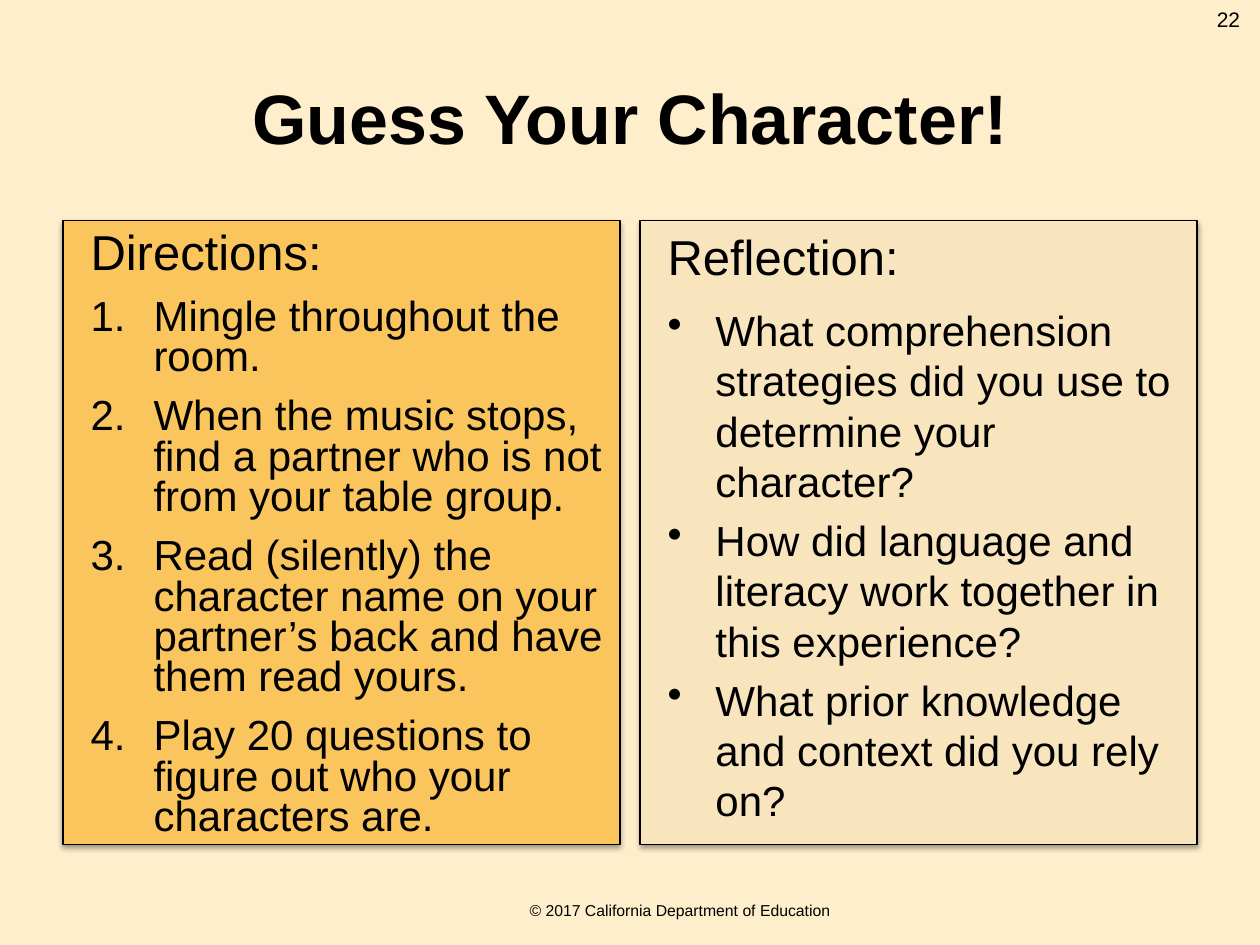
from dataclasses import dataclass

import pptx
import pptx.dml.color
import pptx.enum.shapes
import pptx.enum.text
import pptx.oxml
import pptx.oxml.ns
import pptx.util

Inches = pptx.util.Inches
Pt = pptx.util.Pt
ALIGN = pptx.enum.text.PP_ALIGN
ANCHOR = pptx.enum.text.MSO_ANCHOR
NS = pptx.oxml.ns.nsdecls("a")
INK = "000000"
HEADING_INDENT = 0.12


@dataclass(frozen=True)
class Panel:
    left: float
    fill: str
    heading: str
    items: tuple[str, ...]
    marker: str
    indent: float
    hanging: float
    line_spacing: float
    space_after: float
    top_inset: float


PANELS = (
    Panel(0.5, "FAC55C", "Directions:", (
        "Mingle throughout the room.",
        "When the music stops, find a partner who is not from your table group.",
        "Read (silently) the character name on your partner’s back and have them read yours.",
        "Play 20 questions to figure out who your characters are.",
    ), '<a:buAutoNum %s type="arabicPeriod"/>', 0.62, 0.5, 0.8, 6, 0.1),
    Panel(5.08, "F8E5BE", "Reflection:", (
        "What comprehension strategies did you use to determine your character?",
        "How did language and literacy work together in this experience?",
        "What prior knowledge and context did you rely on?",
    ), '<a:buChar %s char="•"/>', 0.5, 0.38, 1.0, 0, 0.05),
)


def color(value: str) -> pptx.dml.color.RGBColor:
    return pptx.dml.color.RGBColor.from_string(value)


def write(paragraph, text: str, *, size: float, bold: bool = False, align=ALIGN.LEFT,
          before: float = 0, after: float = 0, spacing: float = 1.0,
          indent: float = 0, hanging: float = 0, marker: str = "") -> None:
    paragraph.alignment = align
    paragraph.line_spacing = spacing
    paragraph.space_before = Pt(before)
    paragraph.space_after = Pt(after)
    properties = paragraph._p.get_or_add_pPr()
    properties.set("marL", str(Inches(indent)))
    properties.set("indent", str(-Inches(hanging)))
    properties.append(pptx.oxml.parse_xml((marker or "<a:buNone %s/>") % NS))
    run = paragraph.add_run()
    run.text = text
    run.font.name = "Arial"
    run.font.size = Pt(size)
    run.font.bold = bold
    run.font.color.rgb = color(INK)


def draw_label(slide, text: str, left: float, top: float, width: float, height: float,
               size: float, anchor) -> None:
    label = slide.shapes.add_textbox(Inches(left), Inches(top), Inches(width), Inches(height))
    label.text_frame.word_wrap = True
    label.text_frame.vertical_anchor = anchor
    write(label.text_frame.paragraphs[0], text, size=size, align=ALIGN.CENTER)


def draw_panel(slide, panel: Panel) -> None:
    card = slide.shapes.add_shape(
        pptx.enum.shapes.MSO_SHAPE.RECTANGLE,
        Inches(panel.left), Inches(1.75), Inches(4.42), Inches(4.95))
    card.fill.solid()
    card.fill.fore_color.rgb = color(panel.fill)
    card.line.color.rgb = color(INK)
    card.line.width = Pt(0.75)
    card._element.spPr.append(pptx.oxml.parse_xml(
        f'<a:effectLst {NS}><a:outerShdw blurRad="{Pt(3.1)}" dist="{Pt(1.6)}" dir="5400000" '
        f'rotWithShape="0"><a:srgbClr val="{INK}"><a:alpha val="38000"/></a:srgbClr>'
        '</a:outerShdw></a:effectLst>'))
    body = card.text_frame
    body.word_wrap = True
    body.vertical_anchor = ANCHOR.TOP
    body.margin_top = Inches(panel.top_inset)
    write(body.paragraphs[0], panel.heading, size=28, after=6,
          spacing=panel.line_spacing, indent=HEADING_INDENT)
    for item in panel.items:
        write(body.add_paragraph(), item, size=24, before=4.8, after=panel.space_after,
              spacing=panel.line_spacing, indent=panel.indent, hanging=panel.hanging,
              marker=panel.marker)


def main() -> None:
    deck = pptx.Presentation()
    deck.slide_width = Inches(10)
    deck.slide_height = Inches(7.5)
    slide = deck.slides.add_slide(deck.slide_layouts[5])
    slide.background.fill.solid()
    slide.background.fill.fore_color.rgb = color("FFEECB")

    title = slide.shapes.title
    title.left, title.top = Inches(0.5), Inches(0.3)
    title.width, title.height = Inches(9), Inches(1.25)
    title.text_frame.vertical_anchor = ANCHOR.MIDDLE
    write(title.text_frame.paragraphs[0], "Guess Your Character!",
          size=40, bold=True, align=ALIGN.CENTER)

    for panel in PANELS:
        draw_panel(slide, panel)
    draw_label(slide, "© 2017 California Department of Education",
               0.79, 7.1, 9.21, 0.25, 9, ANCHOR.MIDDLE)
    draw_label(slide, "22", 9.5, 0, 0.5, 0.4, 12, ANCHOR.TOP)
    deck.save("out.pptx")


if __name__ == "__main__":
    main()
